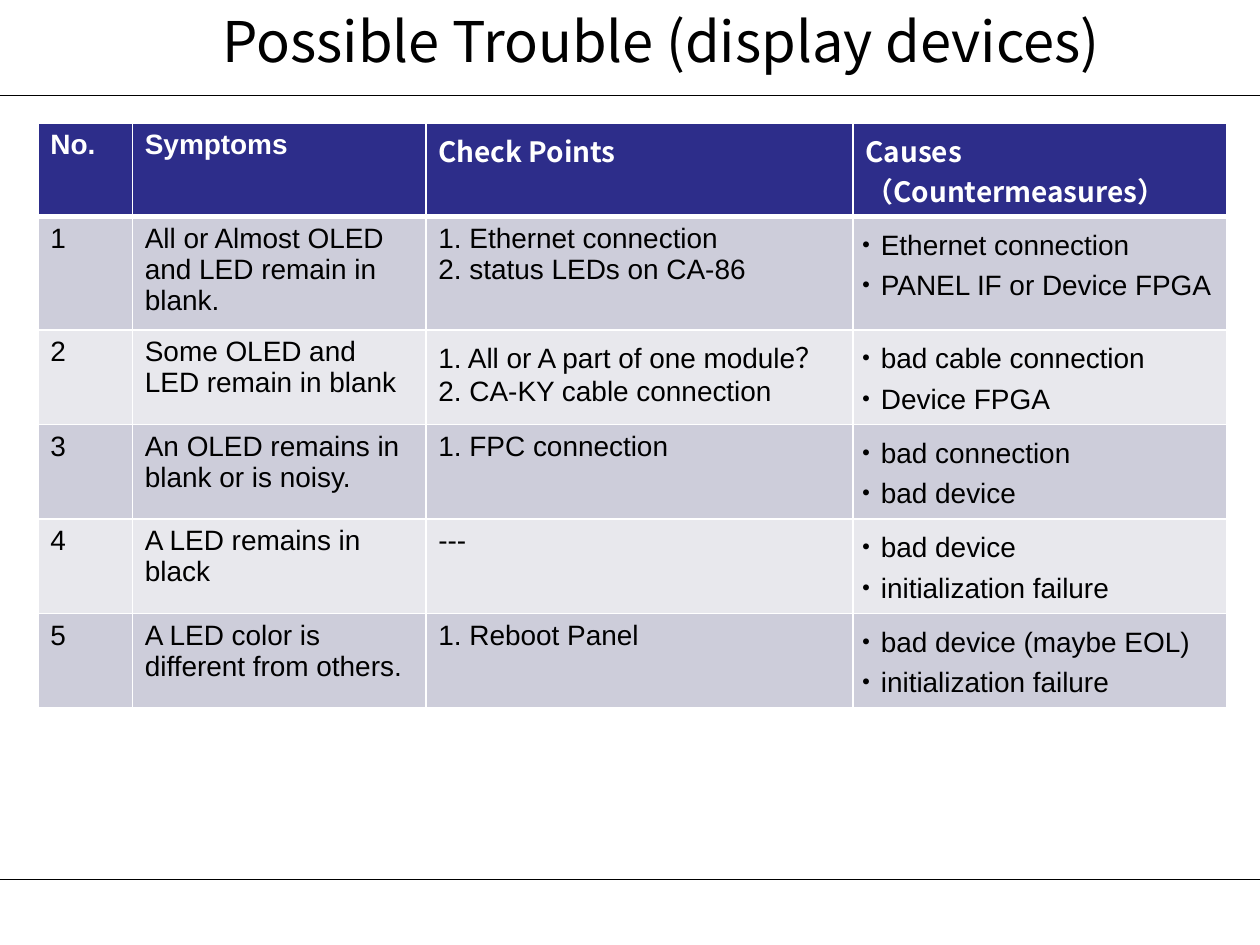
from lxml.etree import SubElement
from pptx import Presentation
from pptx.dml.color import RGBColor
from pptx.enum.shapes import MSO_CONNECTOR
from pptx.enum.text import MSO_ANCHOR, PP_ALIGN
from pptx.oxml.ns import qn
from pptx.util import Inches, Pt

BLACK = RGBColor(0x00, 0x00, 0x00)
WHITE = RGBColor(0xFF, 0xFF, 0xFF)
NAVY = RGBColor(0x2D, 0x2D, 0x8A)
GREY = RGBColor(0xCD, 0xCD, 0xDA)
PALE = RGBColor(0xE8, 0xE8, 0xED)
LATIN = "Arial"
CJK = "Noto Sans CJK JP"

COLUMN_WIDTHS = [0.75, 2.33, 3.39, 2.97]
ROW_HEIGHTS = [0.74, 0.87, 0.75, 0.75, 0.75, 0.75]
HEADER = ["No.", "Symptoms", "Check Points", "Causes\n（Countermeasures）"]
HEADER_FONTS = [LATIN, LATIN, CJK, CJK]
TROUBLES = [
    ["1", "All or Almost OLED and LED remain in blank.",
     "1. Ethernet connection\n2. status LEDs on CA-86",
     "・Ethernet connection\n・PANEL IF or Device FPGA"],
    ["2", "Some OLED and LED remain in blank",
     "1. All or A part of one module？\n2. CA-KY cable connection",
     "・bad cable connection\n・Device FPGA"],
    ["3", "An OLED remains in blank or is noisy.",
     "1. FPC connection",
     "・bad connection\n・bad device"],
    ["4", "A LED remains in black",
     "---",
     "・bad device\n・initialization failure"],
    ["5", "A LED color is different from others.",
     "1. Reboot Panel",
     "・bad device (maybe EOL)\n・initialization failure"],
]


def write_text(frame, text, size=16, font=LATIN, color=BLACK, bold=False,
               align=PP_ALIGN.LEFT):
    """Write each line of the text as one paragraph."""
    for index, line in enumerate(text.split("\n")):
        para = frame.add_paragraph() if index else frame.paragraphs[0]
        para.alignment = align
        span = para.add_run()
        span.text = line
        span.font.size = Pt(size)
        span.font.bold = bold
        span.font.name = font
        span.font.color.rgb = color
        SubElement(span.font._element, qn("a:ea"), typeface=CJK)


def set_borders(cell, top=1, bottom=1):
    """Draw white borders, widths in points; call before filling the cell."""
    properties = cell._tc.get_or_add_tcPr()
    for side, width in (("L", 1), ("R", 1), ("T", top), ("B", bottom)):
        border = SubElement(properties, qn(f"a:ln{side}"), w=str(Pt(width)))
        fill = SubElement(border, qn("a:solidFill"))
        SubElement(fill, qn("a:srgbClr"), val=str(WHITE))


class SlideBuilder:
    def __init__(self, slide):
        self.slide = slide
        self.shapes = slide.shapes

    def rule(self, top):
        """Draw a thin line across the whole slide."""
        line = self.shapes.add_connector(
            MSO_CONNECTOR.STRAIGHT, 0, Inches(top), Inches(10), Inches(top))
        line.line.color.rgb = BLACK
        line.line.width = Pt(0.75)
        SubElement(line._element.spPr, qn("a:effectLst"))

    def title(self, text):
        box = self.shapes.add_textbox(Inches(0.75), 0, Inches(9), Inches(0.76))
        frame = box.text_frame
        frame.word_wrap = True
        frame.vertical_anchor = MSO_ANCHOR.TOP
        write_text(frame, text, size=32, font=CJK, align=PP_ALIGN.CENTER)

    def table(self, left, top):
        rows = [HEADER] + TROUBLES
        table = self.shapes.add_table(
            len(rows), len(HEADER), Inches(left), Inches(top),
            Inches(sum(COLUMN_WIDTHS)), Inches(sum(ROW_HEIGHTS))).table
        for column, width in zip(table.columns, COLUMN_WIDTHS):
            column.width = Inches(width)
        for row, height in zip(table.rows, ROW_HEIGHTS):
            row.height = Inches(height)
        for row_index, texts in enumerate(rows):
            for column_index, text in enumerate(texts):
                cell = table.cell(row_index, column_index)
                set_borders(cell, top=3 if row_index == 1 else 1,
                            bottom=3 if row_index == 0 else 1)
                cell.fill.solid()
                if row_index == 0:
                    cell.fill.fore_color.rgb = NAVY
                    write_text(cell.text_frame, text, color=WHITE, bold=True,
                               font=HEADER_FONTS[column_index])
                else:
                    cell.fill.fore_color.rgb = GREY if row_index % 2 else PALE
                    write_text(cell.text_frame, text)
                if text.startswith("・"):
                    # The full-width dot brings its own space on the left.
                    cell.margin_left = cell.margin_right = 0


def main():
    deck = Presentation()
    deck.slide_width = Inches(10)
    deck.slide_height = Inches(7.5)
    page = SlideBuilder(deck.slides.add_slide(deck.slide_layouts[6]))
    for top in (6.98, 0.76):
        page.rule(top)
    page.title("Possible Trouble (display devices)")
    page.table(0.3, 0.98)
    deck.save("out.pptx")


if __name__ == "__main__":
    main()
